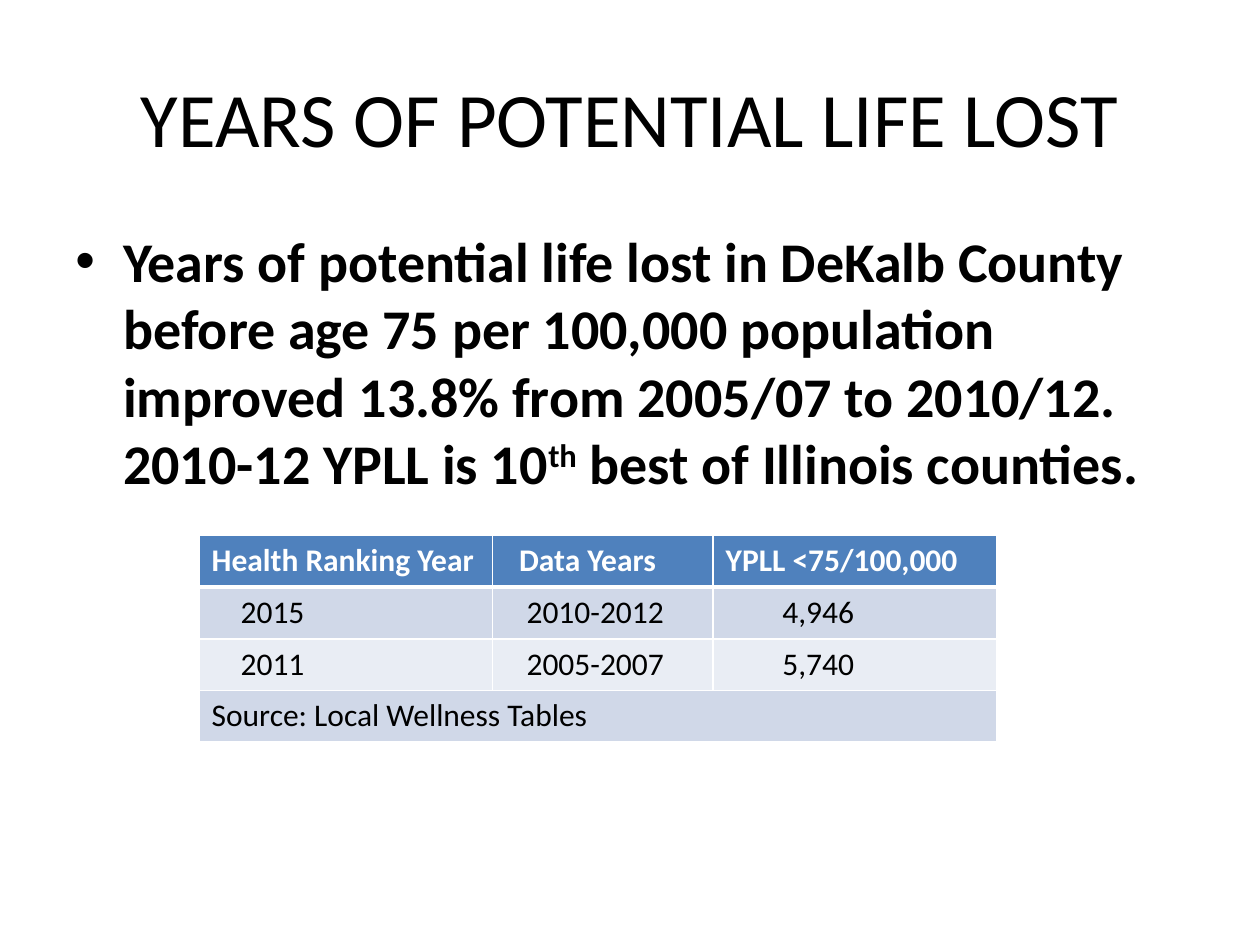
from lxml.etree import SubElement
from pptx import Presentation
from pptx.dml.color import RGBColor
from pptx.enum.text import MSO_ANCHOR, PP_ALIGN
from pptx.oxml.ns import qn
from pptx.util import Inches, Pt

BLACK = RGBColor(0, 0, 0)
WHITE = RGBColor(255, 255, 255)
BLUE = RGBColor(0x4F, 0x81, 0xBD)
BAND = RGBColor(0xD0, 0xD8, 0xE8)
PALE = RGBColor(0xE9, 0xED, 0xF4)

COLS = [2.33, 1.75, 2.25]
ROW = 0.41
PAD = 0.1
HEAD = ["Health Ranking Year", "Data Years", "YPLL <75/100,000"]
DATA = [["2015", "2010-2012", "4,946"], ["2011", "2005-2007", "5,740"]]
SOURCE = "Source: Local Wellness Tables"


def apply(item, form):
    for key, value in form.items():
        setattr(item, key, value)


def add_run(para, text, size, color=BLACK, bold=False):
    run = para.add_run()
    run.text = text
    apply(run.font, {"name": "Calibri", "size": Pt(size), "bold": bold})
    run.font.color.rgb = color
    return run


def add_box(slide, box, anchor):
    frame = slide.shapes.add_textbox(*map(Inches, box)).text_frame
    apply(frame, {"word_wrap": True, "vertical_anchor": anchor})
    return frame.paragraphs[0]


def add_title(slide, box):
    para = add_box(slide, box, MSO_ANCHOR.MIDDLE)
    para.alignment = PP_ALIGN.CENTER
    add_run(para, "YEARS OF POTENTIAL LIFE LOST", 44)


def add_body(slide, box):
    para = add_box(slide, box, MSO_ANCHOR.TOP)
    para.space_before = Pt(6.4)
    props = para._p.get_or_add_pPr()
    props.set("marL", str(Inches(0.38)))
    props.set("indent", str(Inches(-0.38)))
    SubElement(props, qn("a:buFont"), typeface="Arial")
    SubElement(props, qn("a:buChar"), char="•")
    add_run(para, "Years of potential life lost in DeKalb County before age 75 "
            "per 100,000 population improved 13.8% from 2005/07 to 2010/12. "
            "2010-12 YPLL is 10", 32, bold=True)
    small = add_run(para, "th", 32, bold=True)
    small.font._element.set("baseline", "30000")
    add_run(para, " best of Illinois counties.", 32, bold=True)


def add_edges(cell, widths):
    props = cell._tc.get_or_add_tcPr()
    for side, width in widths.items():
        line = SubElement(props, qn(f"a:ln{side}"), w=str(Pt(width)))
        fill = SubElement(line, qn("a:solidFill"))
        SubElement(fill, qn("a:srgbClr"), val=str(WHITE))


def add_grid(slide, left, top):
    rows = [HEAD, *DATA, [SOURCE, "", ""]]
    fills = [BLUE, BAND, PALE, BAND]
    insets = [[0, 0.11, 0], *[[0.23, 0.17, 0.45]] * 2, [0, 0, 0]]
    size = (sum(COLS), ROW * len(rows))
    table = slide.shapes.add_table(
        len(rows), len(COLS), *map(Inches, (left, top, *size))).table
    for col, width in zip(table.columns, COLS):
        col.width = Inches(width)
    for r, texts in enumerate(rows):
        table.rows[r].height = Inches(ROW)
        for c, text in enumerate(texts):
            cell = table.cell(r, c)
            add_edges(cell, {"L": 1, "R": 1, "T": 3 if r == 1 else 1,
                             "B": 3 if r == 0 else 1})
            cell.fill.solid()
            cell.fill.fore_color.rgb = fills[r]
            cell.margin_left = Inches(PAD + insets[r][c])
            if text:
                add_run(cell.text_frame.paragraphs[0], text, 18,
                        BLACK if r else WHITE, r == 0)
    last = len(rows) - 1
    table.cell(last, 0).merge(table.cell(last, len(COLS) - 1))


def main():
    deck = Presentation()
    apply(deck, {"slide_width": Inches(10), "slide_height": Inches(7.5)})
    slide = deck.slides.add_slide(deck.slide_layouts[6])
    add_title(slide, (0.5, 0.3, 9, 1.25))
    add_body(slide, (0.5, 1.75, 9, 4.95))
    add_grid(slide, 1.58, 4.25)
    deck.save("out.pptx")


if __name__ == "__main__":
    main()
